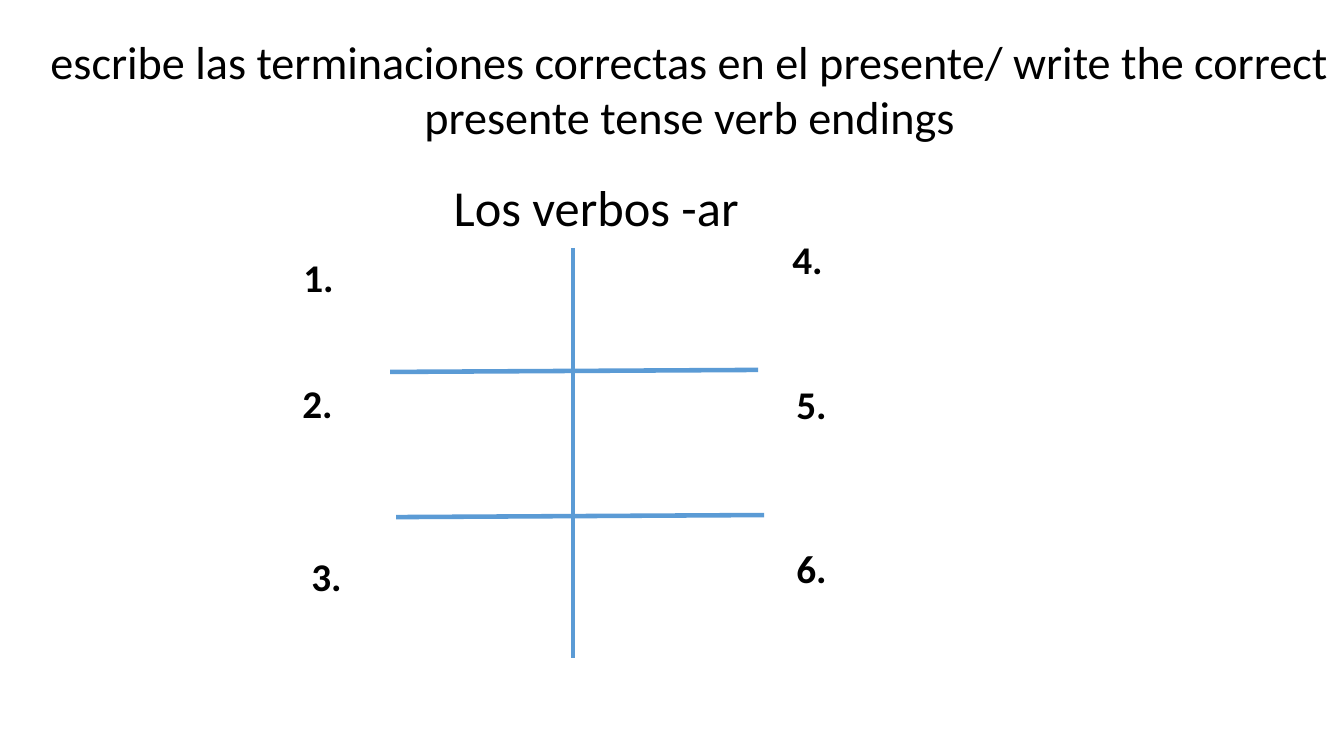
from dataclasses import dataclass

from lxml.etree import SubElement
from pptx import Presentation
from pptx.dml.color import RGBColor as RGB
from pptx.enum.shapes import MSO_CONNECTOR as CONN
from pptx.enum.text import MSO_AUTO_SIZE as AUTO, PP_ALIGN as ALIGN
from pptx.oxml.ns import qn
from pptx.util import Inches, Pt


@dataclass(frozen=True)
class Theme:
    """Fonts, colours, sizes and line weights of the slide."""
    font: str = "Calibri"
    ink: RGB = RGB(0, 0, 0)
    rule: RGB = RGB(0x5B, 0x9B, 0xD5)
    instruction: int = 33
    heading: int = 36
    number: int = 28
    upright: float = 3
    crossbar: float = 3.25


THEME = Theme()
W, H = Inches(13.33), Inches(7.5)
CROSSBAR_WIDTH, CROSSBAR_RISE = 27.38, 0.27
NUMBERS = [
    (21.83, 32.8), (21.76, 49.47), (22.43, 72.4),
    (58.21, 30.53), (58.51, 49.6), (58.51, 71.33),
]


def across(share):
    """Turn a percentage of the slide's width into a length."""
    return round(W * share / 100)


def down(share):
    """Turn a percentage of the slide's height into a length."""
    return round(H * share / 100)


def add_text(s, text, x, y, w, h, size, bold=False, align=ALIGN.LEFT, wrap=True):
    """Add a text box that holds one paragraph."""
    tf = s.shapes.add_textbox(across(x), down(y), across(w), down(h)).text_frame
    tf.word_wrap = wrap
    tf.auto_size = AUTO.SHAPE_TO_FIT_TEXT
    p = tf.paragraphs[0]
    p.text = text
    p.alignment = align
    p.font.name = THEME.font
    p.font.size = Pt(size)
    p.font.bold = bold
    p.font.color.rgb = THEME.ink


def add_rule(s, x1, y1, x2, y2, weight):
    """Add a plain line of the verb chart."""
    line = s.shapes.add_connector(CONN.STRAIGHT, across(x1), down(y1), across(x2), down(y2))
    line.line.color.rgb = THEME.rule
    line.line.width = Pt(weight)
    SubElement(line._element.spPr, qn("a:effectLst"))


def main():
    """Build the verb endings exercise."""
    prs = Presentation()
    prs.slide_width, prs.slide_height = W, H
    s = prs.slides.add_slide(prs.slide_layouts[6])

    add_rule(s, 42.61, 32.8, 42.61, 87.07, THEME.upright)
    for x, y in [(29.03, 49.2), (29.48, 68.4)]:
        add_rule(s, x, y, x + CROSSBAR_WIDTH, y - CROSSBAR_RISE, THEME.crossbar)

    add_text(s, "Los verbos -ar", 33.01, 22.67, 22.81, 9.47, THEME.heading, wrap=False)
    add_text(s, "escribe las terminaciones correctas en el presente/ "
             "write the correct presente tense verb endings",
             1.8, 3.73, 99.02, 16.13, THEME.instruction, align=ALIGN.CENTER)
    for number, (x, y) in enumerate(NUMBERS, 1):
        add_text(s, f"{number}.", x, y, 5.33, 7.6, THEME.number, bold=True)

    prs.save("out.pptx")


if __name__ == "__main__":
    main()
